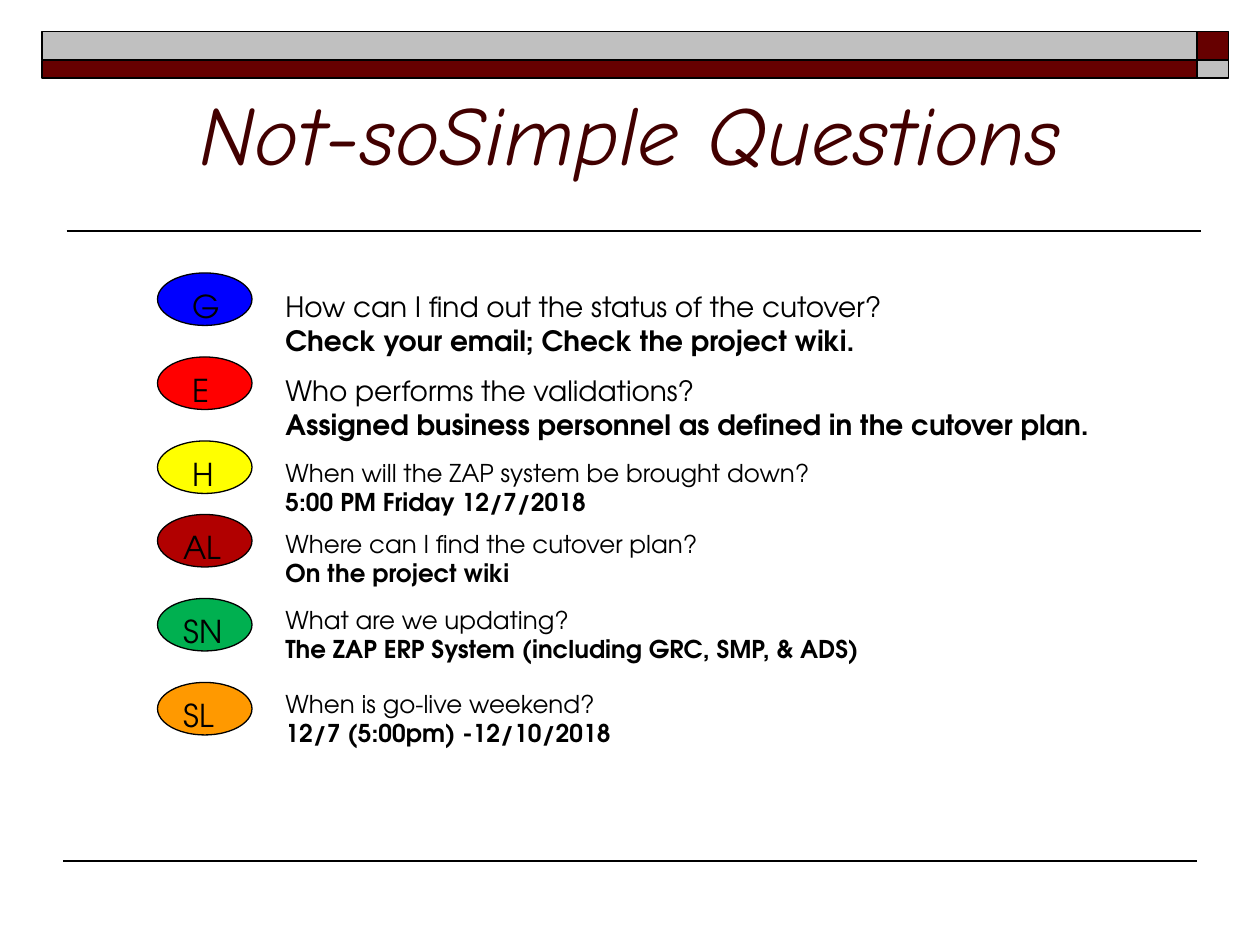
import dataclasses
import typing

import lxml.etree
import pptx
import pptx.dml.color
import pptx.enum.shapes
import pptx.enum.text
import pptx.oxml.ns
import pptx.util

Shape = pptx.enum.shapes.MSO_SHAPE
Align = pptx.enum.text.PP_ALIGN
Anchor = pptx.enum.text.MSO_ANCHOR


@dataclasses.dataclass(frozen=True)
class Theme:
    ink: str = "000000"
    maroon: str = "660000"
    silver: str = "C0C0C0"
    title: str = "420000"
    head: str = "Comic Neue"
    body: str = "TeX Gyre Adventor"
    title_size: int = 48
    badge_size: int = 18
    large: int = 16
    small: int = 14


class Box(typing.NamedTuple):
    left: float
    top: float
    width: float
    height: float


class Bar(typing.NamedTuple):
    box: Box
    fill: str


class Rule(typing.NamedTuple):
    left: float
    right: float
    top: float
    weight: float


class Card(typing.NamedTuple):
    mark: str
    fill: str
    row: float
    text_row: float
    width: float
    size: int
    ask: str
    answer: str


THEME = Theme()
COLS, ROWS = 120, 90
UNIT = pptx.util.Inches(10) / COLS
BARS = [
    Bar(Box(114, 3, 3, 2.75), THEME.maroon),
    Bar(Box(4, 3, 110, 2.75), THEME.silver),
    Bar(Box(4, 5.75, 110, 1.65), THEME.maroon),
    Bar(Box(114, 5.75, 3, 1.65), THEME.silver),
]
RULES = [Rule(6.35, 114.35, 22, 1), Rule(6, 114, 82, 0.75)]
CARDS = [
    Card("G", "0000FF", 26, 27, 74, THEME.large,
         "How can I find out the status of the cutover?",
         "Check your email; Check the project wiki."),
    Card("E", "FF0000", 34, 35, 88, THEME.large,
         "Who performs the validations?",
         "Assigned business personnel as defined in the cutover plan."),
    Card("H", "FFFF00", 42, 43, 62, THEME.small,
         "When will the ZAP system be brought down?",
         "5:00 PM Friday 12/7/2018"),
    Card("AL", "B10000", 49, 49.8, 85, THEME.small,
         "Where can I find the cutover plan?",
         "On the project wiki"),
    Card("SN", "00B050", 57, 57, 78, THEME.small,
         "What are we updating?",
         "The ZAP ERP System (including GRC, SMP, & ADS)"),
    Card("SL", "FF9900", 65, 65, 86, THEME.small,
         "When is go-live weekend?",
         "12/7 (5:00pm) -12/10/2018"),
]


def grid(count: float) -> int:
    return round(count * UNIT)


def place(box: Box) -> list[int]:
    return [grid(value) for value in box]


def tint(code: str) -> pptx.dml.color.RGBColor:
    return pptx.dml.color.RGBColor.from_string(code)


def write(frame, text: str, *, size: int, font: str = THEME.body,
          color: str = THEME.ink, bold: bool = False, italic: bool = False,
          align=Align.LEFT, anchor=Anchor.TOP) -> None:
    frame.word_wrap = True
    frame.vertical_anchor = anchor
    para = frame.add_paragraph() if frame.text else frame.paragraphs[0]
    para.alignment = align
    run = para.add_run()
    run.text = text
    run.font.name = font
    run.font.size = pptx.util.Pt(size)
    run.font.bold = bold
    run.font.italic = italic
    run.font.color.rgb = tint(color)


def solid(slide, kind, box: Box, fill: str, weight: float):
    shape = slide.shapes.add_shape(kind, *place(box))
    shape.shadow.inherit = False
    shape.fill.solid()
    shape.fill.fore_color.rgb = tint(fill)
    shape.line.color.rgb = tint(THEME.ink)
    shape.line.width = pptx.util.Pt(weight)
    return shape


def draw_rule(slide, rule: Rule) -> None:
    line = slide.shapes.add_connector(
        pptx.enum.shapes.MSO_CONNECTOR.STRAIGHT,
        grid(rule.left), grid(rule.top), grid(rule.right), grid(rule.top))
    line.line.color.rgb = tint(THEME.ink)
    line.line.width = pptx.util.Pt(rule.weight)
    lxml.etree.SubElement(line._element.spPr, pptx.oxml.ns.qn("a:effectLst"))


def draw_card(slide, card: Card) -> None:
    badge = solid(slide, Shape.OVAL, Box(15, card.row, 9, 5), card.fill, 0.75)
    inset = 0.17 if len(card.mark) == 1 else 0.1
    badge.text_frame.margin_left = pptx.util.Inches(inset)
    write(badge.text_frame, card.mark, size=THEME.badge_size)
    height = 7.7 if card.size == THEME.large else 6.85
    box = Box(26, card.text_row, card.width, height)
    frame = slide.shapes.add_textbox(*place(box)).text_frame
    write(frame, card.ask, size=card.size)
    write(frame, card.answer, size=card.size, bold=True)


def main() -> None:
    deck = pptx.Presentation()
    deck.slide_width, deck.slide_height = grid(COLS), grid(ROWS)
    slide = deck.slides.add_slide(deck.slide_layouts[6])
    for bar in BARS:
        solid(slide, Shape.RECTANGLE, bar.box, bar.fill, 1)
    for rule in RULES:
        draw_rule(slide, rule)
    title = slide.shapes.add_textbox(*place(Box(6, 3, 108, 15)))
    write(title.text_frame, "Not-soSimple Questions", size=THEME.title_size,
          font=THEME.head, color=THEME.title, italic=True,
          align=Align.CENTER, anchor=Anchor.BOTTOM)
    for card in CARDS:
        draw_card(slide, card)
    deck.save("out.pptx")


if __name__ == "__main__":
    main()
